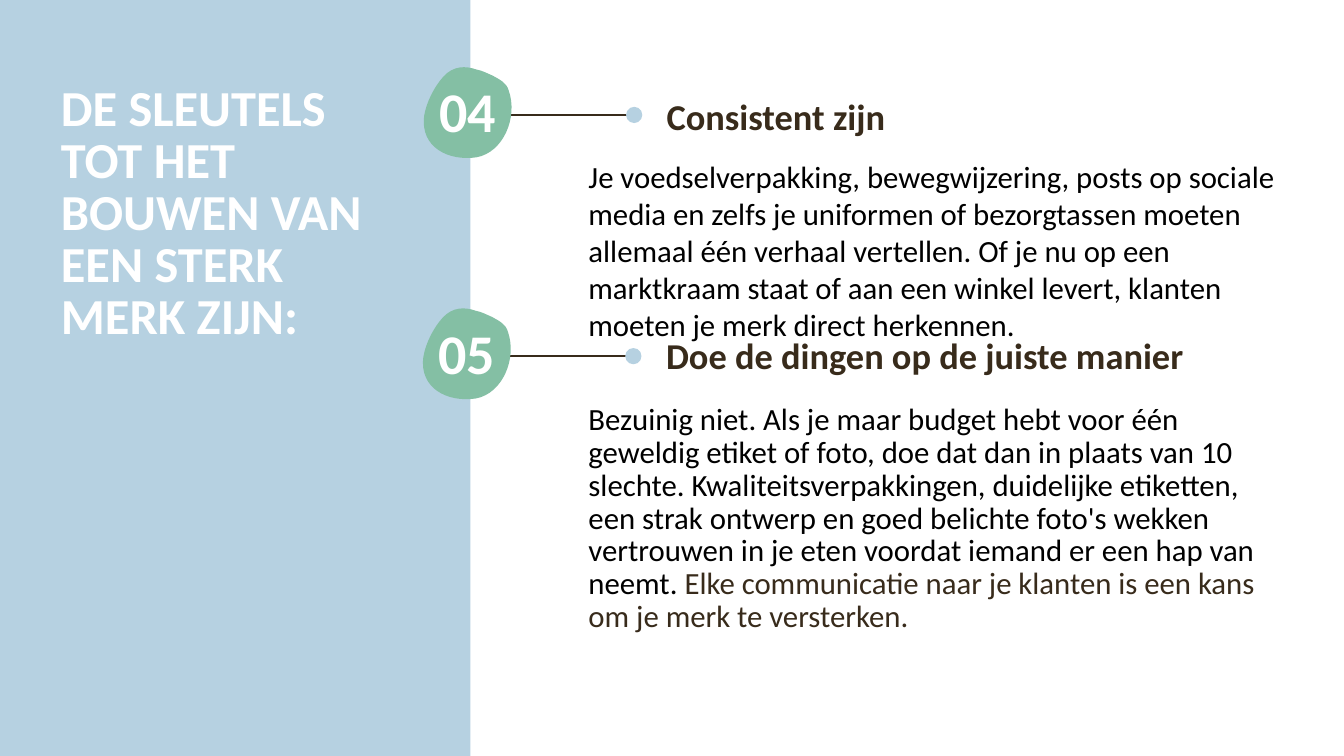
from lxml import etree
from pptx import Presentation
from pptx.dml.color import RGBColor
from pptx.enum.shapes import MSO_CONNECTOR, MSO_SHAPE
from pptx.enum.text import MSO_ANCHOR, MSO_AUTO_SIZE, PP_ALIGN
from pptx.oxml.ns import qn
from pptx.util import Pt

RECT, OVAL = MSO_SHAPE.RECTANGLE, MSO_SHAPE.OVAL
STRAIGHT = MSO_CONNECTOR.STRAIGHT
TOP = MSO_ANCHOR.TOP
NO_FIT, GROW = MSO_AUTO_SIZE.NONE, MSO_AUTO_SIZE.SHAPE_TO_FIT_TEXT
LEFT, CENTER = PP_ALIGN.LEFT, PP_ALIGN.CENTER

COLORS = {"blue": "B6D1E1", "green": "84BFA4", "brown": "382B1B",
          "white": "FFFFFF", "black": "000000"}

# Pebble outline in tenths of a point: a start, then curves (two controls, end)
PEBBLE_WIDTH, PEBBLE_HEIGHT = 626, 648
PEBBLE_START = (374, 14)
PEBBLE_CURVES = [
    ((295, -14), (209, -14), (137, 65)),
    ((72, 137), (14, 252), (0, 346)),
    ((-29, 569), (173, 670), (374, 641)),
    ((569, 605), (670, 353), (605, 166)),
    ((590, 108), (540, 86), (490, 58)),
    ((454, 43), (418, 22), PEBBLE_START),
]

# number, badge left, badge top, heading left, heading top, heading,
# body top, body height, body line spacing, body fit, body runs
KEYS = [
    ("04", 303, 48.3, 469.1, 63.8, "Consistent zijn", 109, 113.8, 1.0, GROW,
     [("Je voedselverpakking, bewegwijzering, posts op sociale media en zelfs "
       "je uniformen of bezorgtassen moeten allemaal één verhaal vertellen. "
       "Of je nu op een marktkraam staat of aan een winkel levert, klanten "
       "moeten je merk direct herkennen.", "black")]),
    ("05", 302.4, 220.6, 468.7, 234.7, "Doe de dingen op de juiste manier",
     285.1, 209.5, Pt(23.4), NO_FIT,
     [("Bezuinig niet. Als je maar budget hebt voor één geweldig etiket of "
       "foto, doe dat dan in plaats van 10 slechte. Kwaliteitsverpakkingen, "
       "duidelijke etiketten, een strak ontwerp en goed belichte foto's "
       "wekken vertrouwen in je eten voordat iemand er een hap van neemt.",
       "black"),
      (" Elke communicatie naar je klanten is een kans om je merk te "
       "versterken.", "brown")]),
]


def paint(shape, color):
    shape.fill.solid()
    shape.fill.fore_color.rgb = RGBColor.from_string(COLORS[color])
    shape.line.fill.background()
    shape.shadow.inherit = False


def write(box, runs, size, bold=False, align=LEFT, spacing=1.0, fit=NO_FIT):
    """Fill a text box with one paragraph of (text, colour) runs."""
    frame = box.text_frame
    frame.word_wrap = True
    frame.auto_size = fit
    frame.vertical_anchor = TOP
    paragraph = frame.paragraphs[0]
    paragraph.alignment = align
    paragraph.line_spacing = spacing
    paragraph.space_before = Pt(0)
    paragraph.font.name = "Calibri"
    paragraph.font.size = Pt(size)
    paragraph.font.bold = bold
    for text, color in runs:
        run = paragraph.add_run()
        run.text = text
        run.font.color.rgb = RGBColor.from_string(COLORS[color])


prs = Presentation()
prs.slide_width, prs.slide_height = Pt(960), Pt(540)
slide = prs.slides.add_slide(prs.slide_layouts[5])
shapes = slide.shapes

# Side panel, placed behind the title
panel = shapes.add_shape(RECT, Pt(0), Pt(0), Pt(336), Pt(540))
paint(panel, "blue")
title = shapes.title
title._element.addprevious(panel._element)
title.left, title.top, title.width, title.height = Pt(36.3), Pt(56.6), Pt(252.7), Pt(157)
write(title, [("DE SLEUTELS TOT HET BOUWEN VAN EEN STERK MERK ZIJN:", "white")],
      36, bold=True, spacing=Pt(37.2))

for (number, x, y, heading_left, heading_top, heading,
     body_top, body_height, body_spacing, body_fit, body) in KEYS:
    badge = shapes.add_group_shape().shapes
    line_y = Pt(y + 33.8)
    link = badge.add_connector(STRAIGHT, Pt(x + 147.7), line_y, Pt(x + 52), line_y)
    link.line.color.rgb = RGBColor.from_string(COLORS["brown"])
    link.line.width = Pt(1.5)
    etree.SubElement(link._element.spPr, qn("a:effectLst"))
    dot = badge.add_shape(OVAL, Pt(x + 144.2), Pt(y + 28), Pt(11.6), Pt(11.6))
    paint(dot, "blue")

    # The frame's corners set the size; its edges then give way to the curves
    builder = badge.build_freeform(0, 0, scale=Pt(0.1))
    builder.add_line_segments([(PEBBLE_WIDTH, 0), (PEBBLE_WIDTH, PEBBLE_HEIGHT),
                               (0, PEBBLE_HEIGHT)])
    pebble = builder.convert_to_shape(Pt(x), Pt(y))
    paint(pebble, "green")
    outline = next(pebble._element.iter(qn("a:path")))
    for edge in list(outline):
        outline.remove(edge)
    steps = [("a:moveTo", [PEBBLE_START])]
    steps += [("a:cubicBezTo", curve) for curve in PEBBLE_CURVES]
    for tag, points in steps + [("a:close", [])]:
        step = etree.SubElement(outline, qn(tag))
        for px, py in points:
            etree.SubElement(step, qn("a:pt"), x=str(px), y=str(py))

    number_box = badge.add_textbox(Pt(x - 4.2), Pt(y + 8.6), Pt(70.6), Pt(42.5))
    write(number_box, [(number, "white")], 40, bold=True, align=CENTER, spacing=0.9)

    heading_box = shapes.add_textbox(Pt(heading_left), Pt(heading_top), Pt(480.2), Pt(38.9))
    write(heading_box, [(heading, "brown")], 26, bold=True, fit=GROW)
    body_box = shapes.add_textbox(Pt(413.3), Pt(body_top), Pt(515.5), Pt(body_height))
    write(body_box, body, 22, spacing=body_spacing, fit=body_fit)

prs.save("out.pptx")
